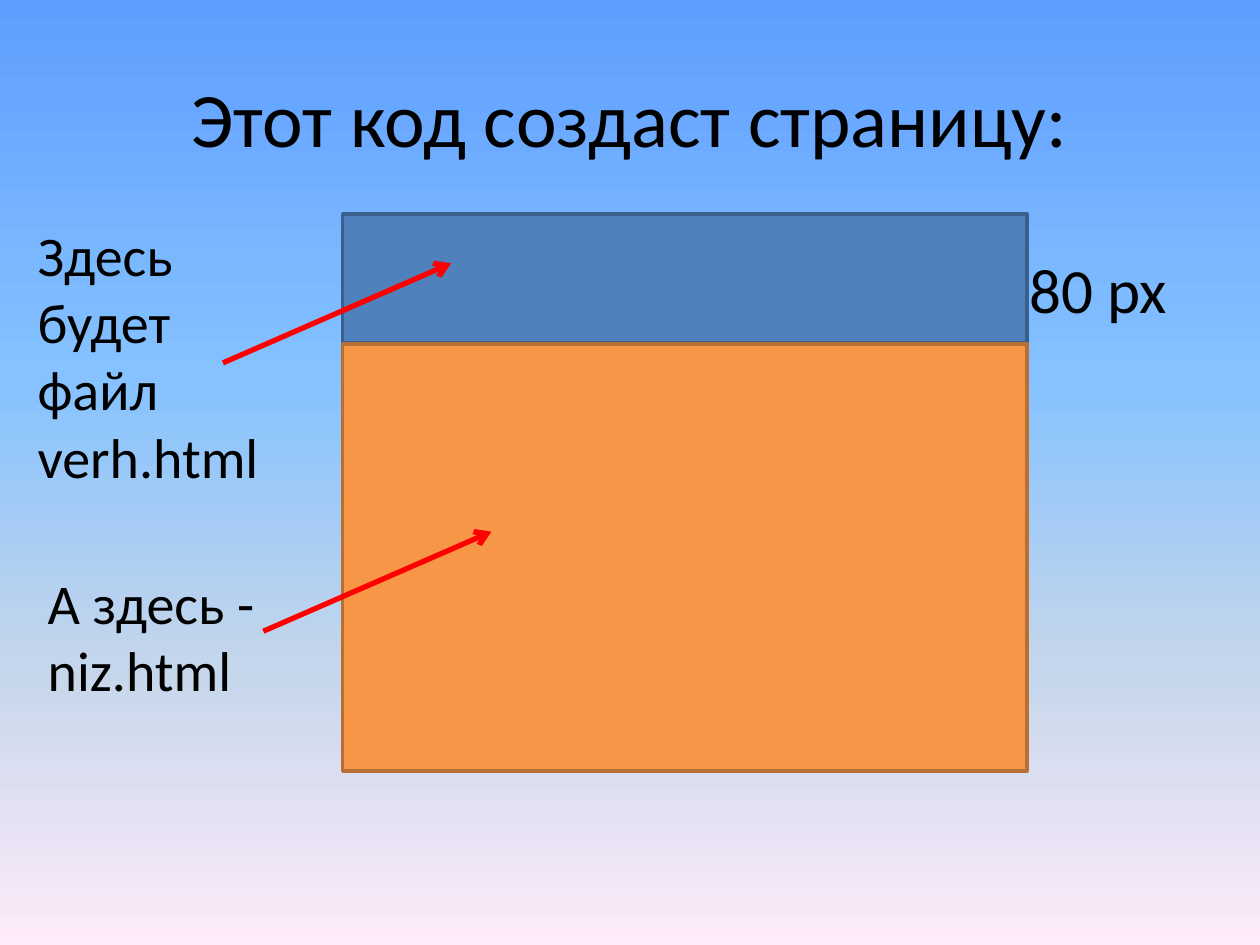
"""Build a slide that shows a page split into two horizontal frames."""
from lxml.etree import SubElement
from pptx import Presentation
from pptx.dml.color import RGBColor
from pptx.enum.shapes import MSO_CONNECTOR as Connector, MSO_SHAPE as Shape
from pptx.enum.text import MSO_ANCHOR as Anchor, MSO_AUTO_SIZE as AutoSize, PP_ALIGN as Align
from pptx.oxml.ns import qn
from pptx.util import Inches, Pt

COLORS = {
    "text": "000000",
    "top": "4F81BD",
    "top_edge": "3A5F8C",
    "bottom": "F79646",
    "bottom_edge": "B76F34",
    "arrow": "FF0000",
}
SKY = {0: "5E9EFF", 40: "85C2FF", 70: "C4D6EB", 100: "FFEBFA"}


def color(name):
    return RGBColor.from_string(COLORS[name])


def paint_background(page):
    page.background.fill.gradient()
    gradient = next(page.element.iter(qn("a:gradFill")))
    stops = gradient.find(qn("a:gsLst"))
    for stop in list(stops):
        stops.remove(stop)
    for position, shade in SKY.items():
        stop = SubElement(stops, qn("a:gs"), pos=str(position * 1000))
        SubElement(stop, qn("a:srgbClr"), val=shade)
    gradient.find(qn("a:lin")).set("ang", str(90 * 60000))


def write(frame, text, size=32, align=Align.LEFT, anchor=Anchor.TOP):
    frame.word_wrap = True
    frame.vertical_anchor = anchor
    para = frame.paragraphs[0]
    para.alignment = align
    span = para.add_run()
    span.text = text
    span.font.size = Pt(size)
    span.font.name = "Calibri"
    span.font.color.rgb = color("text")


def add_title(page, text):
    title = page.shapes.title
    title.left, title.top = Inches(0.5), Inches(0.3)
    title.width, title.height = Inches(9), Inches(1.25)
    write(title.text_frame, text, size=44, align=Align.CENTER, anchor=Anchor.MIDDLE)


def add_label(page, text, left, top, width, height, **style):
    box = page.shapes.add_textbox(Inches(left), Inches(top), Inches(width), Inches(height))
    write(box.text_frame, text, **style)
    box.text_frame.auto_size = AutoSize.SHAPE_TO_FIT_TEXT


def add_frame(page, name, top, height):
    box = page.shapes.add_shape(
        Shape.RECTANGLE, Inches(2.72), Inches(top), Inches(5.43), Inches(height)
    )
    box.shadow.inherit = False
    box.fill.solid()
    box.fill.fore_color.rgb = color(name)
    box.line.color.rgb = color(f"{name}_edge")
    box.line.width = Pt(2)


def add_arrow(page, left, top):
    arrow = page.shapes.add_connector(
        Connector.STRAIGHT, Inches(left), Inches(top), Inches(left + 1.81), Inches(top - 0.79)
    )
    arrow.line.color.rgb = color("arrow")
    arrow.line.width = Pt(3)
    SubElement(arrow.line._get_or_add_ln(), qn("a:tailEnd"), type="arrow")
    SubElement(arrow.element.spPr, qn("a:effectLst"))


def main():
    deck = Presentation()
    deck.slide_width, deck.slide_height = Inches(10), Inches(7.5)
    page = deck.slides.add_slide(deck.slide_layouts[5])
    paint_background(page)
    add_title(page, "Этот код создаст страницу:")
    add_frame(page, "top", 1.7, 1.02)
    add_frame(page, "bottom", 2.73, 3.39)
    add_label(page, "80 px", 8.07, 1.94, 1.34, 0.71, size=36)
    add_label(page, "Здесь будет файл verh.html", 0.2, 1.7, 2.13, 2.26)
    add_label(page, "А здесь - niz.html", 0.28, 4.46, 2.13, 1.18)
    add_arrow(page, 1.77, 2.88)
    add_arrow(page, 2.09, 5.01)
    deck.save("out.pptx")


if __name__ == "__main__":
    main()
